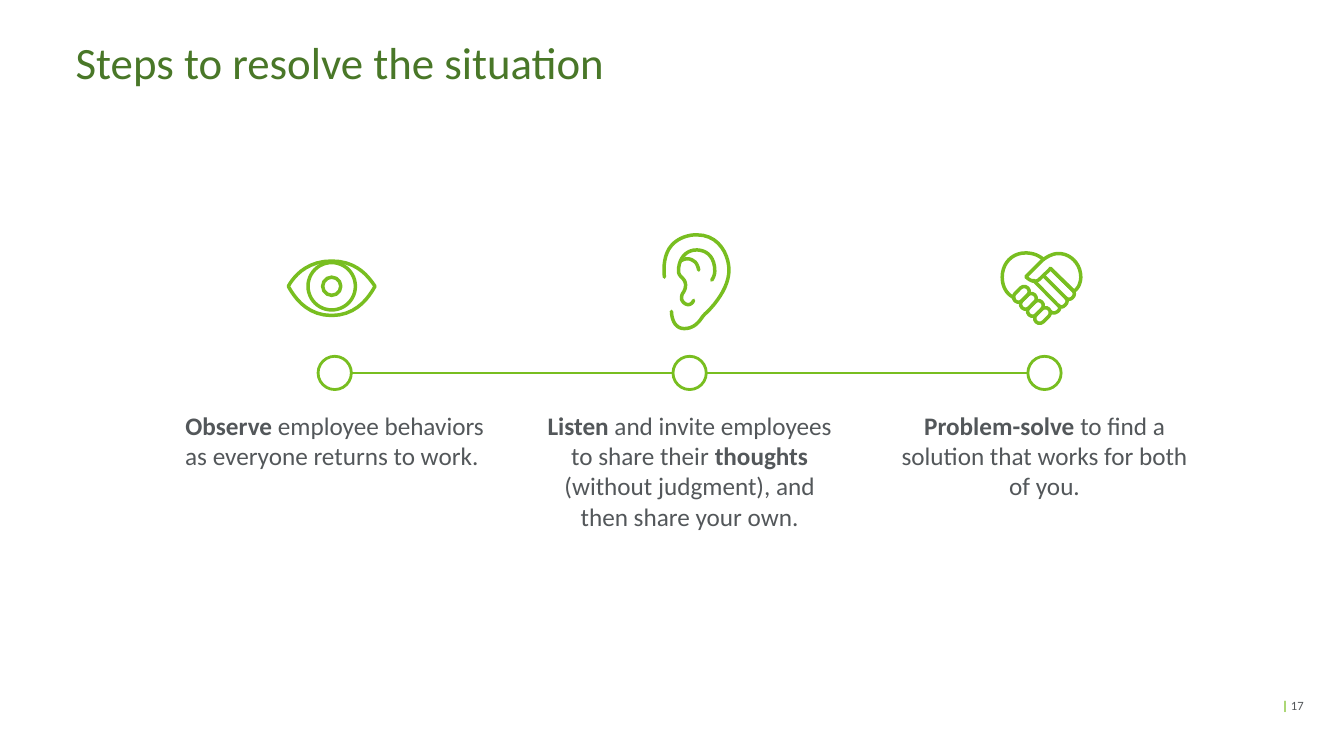
import pptx
import pptx.util
import pptx.dml.color
import pptx.enum.shapes
import pptx.enum.text
import pptx.oxml.ns
import lxml.etree

COLORS = {"green": "78BE20", "title": "497728", "text": "53575A"}
FONT = "Calibri"
ALIGN = pptx.enum.text.PP_ALIGN
ANCHOR = pptx.enum.text.MSO_ANCHOR
SHAPE = pptx.enum.shapes.MSO_SHAPE
Inches = pptx.util.Inches

# Slide grid, in inches
WIDTH, HEIGHT = 13.33, 7.5
MARGIN_LEFT, MARGIN_RIGHT = 0.75, 0.4
FIRST_CENTER, PITCH = 3.32, 3.52
TIMELINE_Y, MARKER = 3.7, 0.33
STEP_WIDTH, STEP_TOP, STEP_HEIGHT = 2.99, 4.07, 1.4
ICON_STROKE = 2.5

# Icon strokes in hundredths of an inch: a start point, then lines (2 numbers) or curves (6)
EYE_OUTLINE = [(2, 27), (6, 20, 18, 2, 45, 2), (72, 2, 83, 20, 88, 27),
               (84, 34, 72, 56, 45, 56), (18, 56, 6, 34, 2, 27)]
EAR_STROKES = [
    [(5, 44), (5, 43, 2, 23, 12.5, 12), (18, 6, 27, 2, 37, 2), (60, 2, 69, 23, 69, 37),
     (69, 51, 60, 66, 47, 79), (45, 80.5, 44, 82, 43, 83), (39, 89, 34, 95, 25, 95),
     (21, 95, 19, 94, 16.5, 91.5), (12, 87, 12, 78, 12, 78)],
    [(34, 67), (33, 70, 30, 72, 27, 71), (24, 70, 22, 67, 22, 65), (22, 62, 23, 60, 24, 59),
     (25, 57, 26, 55, 26, 52), (26, 48, 24, 46, 21.5, 43.5), (20, 42, 19, 40, 19, 38),
     (19, 26, 26, 17, 37, 17), (44, 17, 55, 21, 55, 38), (55, 43, 52, 47, 52, 47)],
    [(21, 28), (26, 25, 30, 25, 34, 28), (38, 30, 39, 37, 39, 37)],
]
HAND_STROKES = [
    [(73, 40), (80, 36, 80, 26, 80, 26), (80, 12, 69, 2.5, 58, 2.5),
     (49, 2.5, 41, 10, 41, 10), (25.5, 25.5), (28, 28, 31, 30, 34, 30),
     (37, 30, 39, 28, 39, 28), (50, 17.5), (73, 40)],
    [(43, 8.5), (38, 4, 32, 2, 25, 2), (12, 2, 2, 12, 2, 26), (2, 35, 6, 43, 14, 46.5)],
    [(43, 24.5), (65, 46.5), (67, 48.5, 70, 48.5, 72, 46), (74, 44, 74, 41, 72, 39),
     (49.5, 17)],
    [(33, 29), (57.5, 54), (60, 56, 62, 56, 64, 54), (67, 51.5, 67, 48.5, 65, 46.5)],
    [(50, 60), (52, 62, 54, 62, 57, 60), (59.5, 58, 59.5, 55.5, 57.5, 53.5)],
]


def rgb(name):
    return pptx.dml.color.RGBColor.from_string(COLORS[name])


def add_text(slide, runs, left, top, width, height, size=18, align=ALIGN.LEFT,
             anchor=ANCHOR.TOP, spacing=None):
    """Runs are (text, color name, bold) triples."""
    box = slide.shapes.add_textbox(Inches(left), Inches(top), Inches(width), Inches(height))
    frame = box.text_frame
    frame.word_wrap = True
    frame.vertical_anchor = anchor
    frame.margin_left = frame.margin_right = frame.margin_top = frame.margin_bottom = 0
    paragraph = frame.paragraphs[0]
    paragraph.alignment = align
    paragraph.line_spacing = spacing
    for text, color, bold in runs:
        run = paragraph.add_run()
        run.text = text
        run.font.name = FONT
        run.font.size = pptx.util.Pt(size)
        run.font.bold = bold
        run.font.color.rgb = rgb(color)


def outline(shape, width):
    shape.shadow.inherit = False
    shape.fill.background()
    shape.line.color.rgb = rgb("green")
    shape.line.width = pptx.util.Pt(width)


def add_outlined(slide, kind, center_x, center_y, width, height, stroke):
    shape = slide.shapes.add_shape(kind, Inches(center_x - width / 2),
                                   Inches(center_y - height / 2),
                                   Inches(width), Inches(height))
    outline(shape, stroke)
    return shape


def stroke_points(stroke, samples=10):
    points = [stroke[0]]
    for segment in stroke[1:]:
        if len(segment) == 2:
            points.append(segment)
            continue
        corners = [points[-1], segment[:2], segment[2:4], segment[4:]]
        for step in range(1, samples + 1):
            t = step / samples
            weights = ((1 - t) ** 3, 3 * t * (1 - t) ** 2, 3 * t ** 2 * (1 - t), t ** 3)
            points.append(tuple(sum(weight * corner[axis]
                                    for weight, corner in zip(weights, corners))
                                for axis in (0, 1)))
    return points


def add_stroke(slide, stroke, left, top):
    points = [(Inches(left + x / 100), Inches(top + y / 100)) for x, y in stroke_points(stroke)]
    builder = slide.shapes.build_freeform(*points[0])
    builder.add_line_segments(points[1:], close=stroke[0] == stroke[-1][-2:])
    shape = builder.convert_to_shape()
    outline(shape, ICON_STROKE)
    shape._element.spPr.find(pptx.oxml.ns.qn("a:ln")).set("cap", "rnd")


def add_eye(slide, left, top):
    add_stroke(slide, EYE_OUTLINE, left, top)
    for diameter in (0.47, 0.18):
        add_outlined(slide, SHAPE.OVAL, left + 0.45, top + 0.27, diameter, diameter, ICON_STROKE)


def add_ear(slide, left, top):
    for stroke in EAR_STROKES:
        add_stroke(slide, stroke, left, top)


def add_handshake(slide, left, top):
    for stroke in HAND_STROKES:
        add_stroke(slide, stroke, left, top)
    for index in range(4):
        shift = 0.07 * index
        finger = add_outlined(slide, SHAPE.ROUNDED_RECTANGLE, left + 0.21 + shift,
                              top + 0.43 + shift, 0.18, 0.1, ICON_STROKE)
        finger.adjustments[0] = 0.5
        finger.rotation = -45


def add_timeline(slide, centers, y):
    for center in centers:
        add_outlined(slide, SHAPE.OVAL, center, y, MARKER, MARKER, 2)
    for start, end in zip(centers, centers[1:]):
        line = slide.shapes.add_connector(
            pptx.enum.shapes.MSO_CONNECTOR.STRAIGHT,
            Inches(start + MARKER / 2), Inches(y), Inches(end - MARKER / 2), Inches(y))
        line.line.color.rgb = rgb("green")
        line.line.width = pptx.util.Pt(2)
        lxml.etree.SubElement(line._element.spPr, pptx.oxml.ns.qn("a:effectLst"))


def add_step(slide, center, draw_icon, icon_shift, icon_top, parts):
    draw_icon(slide, center + icon_shift, icon_top)
    runs = [(text, "text", bold) for text, bold in parts]
    add_text(slide, runs, center - STEP_WIDTH / 2, STEP_TOP, STEP_WIDTH, STEP_HEIGHT,
             align=ALIGN.CENTER)


STEPS = [
    (add_eye, -0.48, 2.57,
     [("Observe", True), (" employee behaviors as everyone returns to work. ", False)]),
    (add_ear, -0.3, 2.31,
     [("Listen", True), (" and invite employees to share their ", False),
      ("thoughts ", True), ("(without judgment), and then share your own.", False)]),
    (add_handshake, -0.44, 2.49,
     [("Problem-solve ", True), ("to find a solution that works for both of you.", False)]),
]


def main():
    presentation = pptx.Presentation()
    presentation.slide_width, presentation.slide_height = Inches(WIDTH), Inches(HEIGHT)
    slide = presentation.slides.add_slide(presentation.slide_layouts[6])

    # Title
    add_text(slide, [("Steps to resolve the situation", "title", False)], MARGIN_LEFT, 0.4,
             WIDTH - MARGIN_LEFT - MARGIN_RIGHT, 0.66, size=32, spacing=0.9)

    # Timeline and steps
    centers = [FIRST_CENTER + PITCH * index for index in range(len(STEPS))]
    add_timeline(slide, centers, TIMELINE_Y)
    for center, step in zip(centers, STEPS):
        add_step(slide, center, *step)

    # Page number
    add_text(slide, [("| ", "green", True), ("17", "text", False)],
             WIDTH - MARGIN_RIGHT - 1.33, 6.83, 1.33, 0.33, size=9,
             align=ALIGN.RIGHT, anchor=ANCHOR.MIDDLE)

    presentation.save("out.pptx")


if __name__ == "__main__":
    main()
